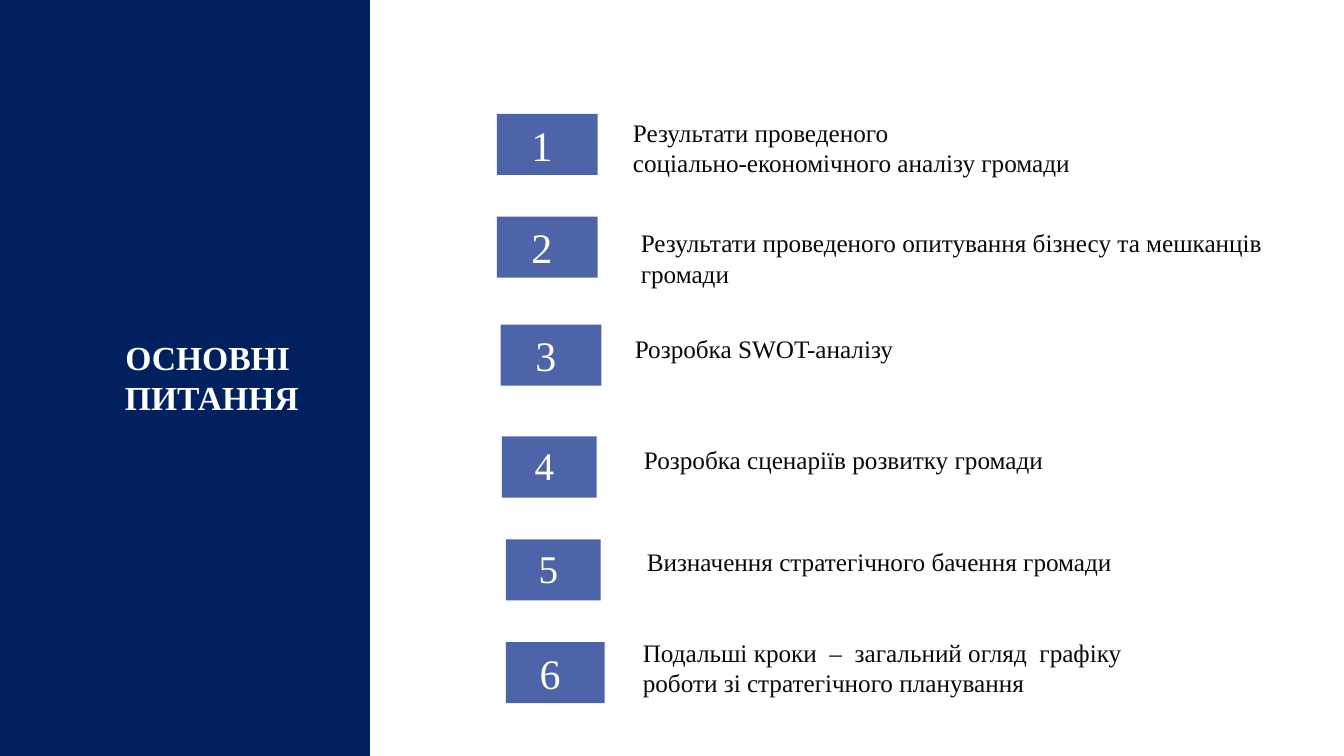
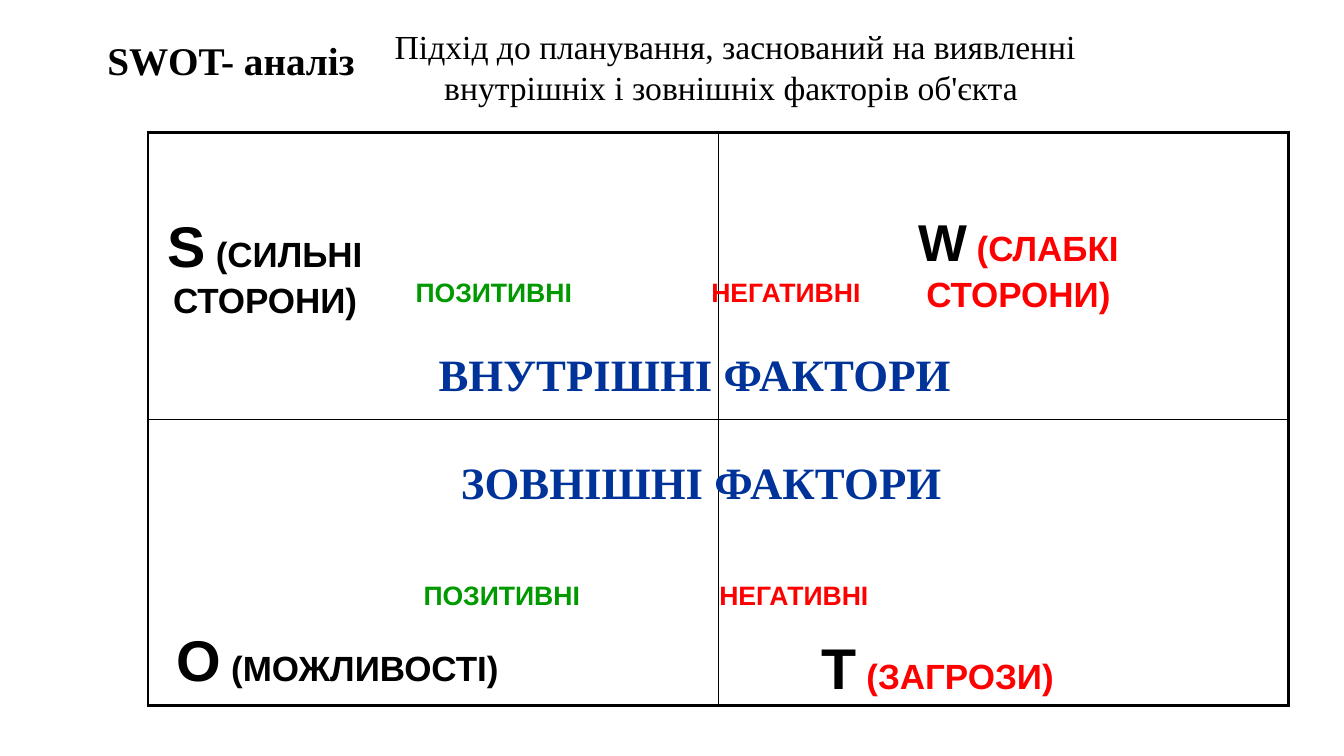
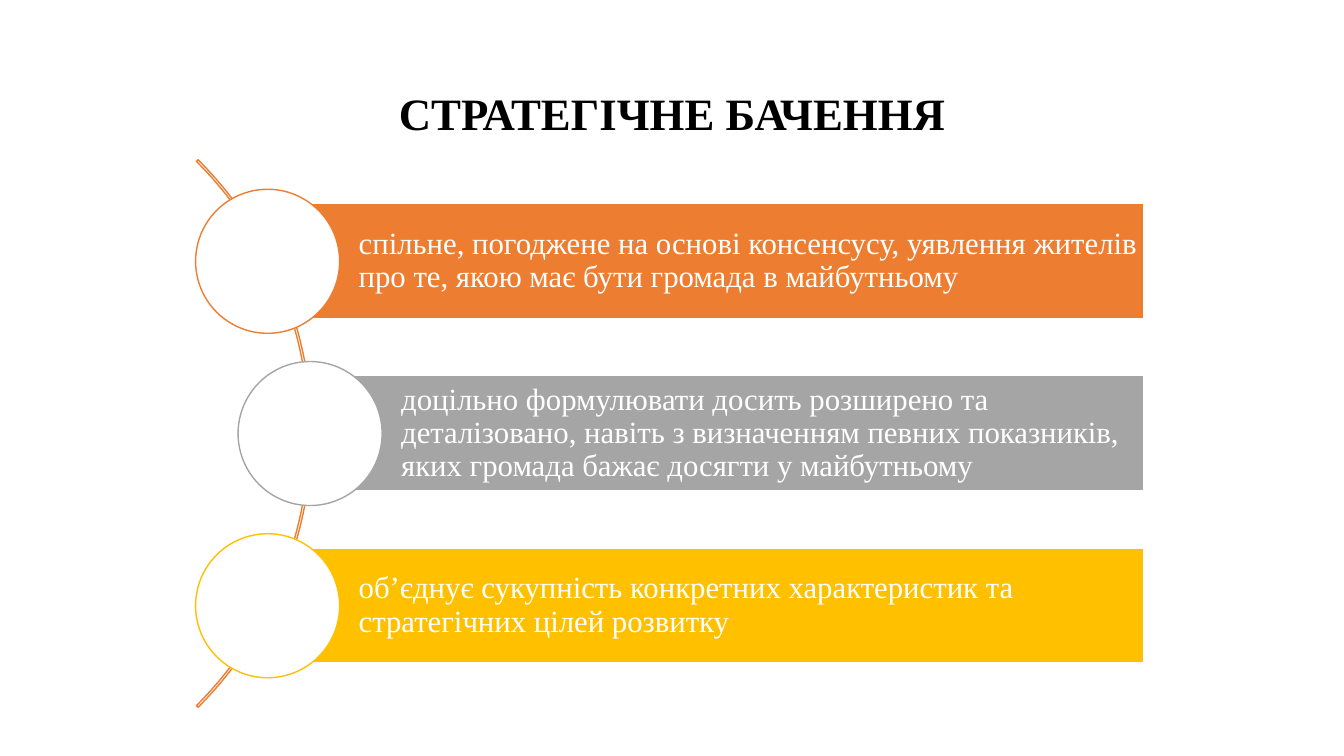
from lxml import etree
from pptx import Presentation
from pptx.dml.color import RGBColor
from pptx.enum import shapes, text
from pptx.oxml import ns
from pptx.util import Cm, Pt

# Shared style
SERIF, SANS = "Times New Roman", "Arial"
BLACK, WHITE, INK = "000000", "FFFFFF", "080808"
NAVY, BADGE_BLUE, FACTOR_BLUE = "002060", "4D64A9", "003399"
GREEN, RED = "009900", "FF0000"
ORANGE, GREY, GOLD = "ED7D31", "A5A5A5", "FFC000"
LEFT, CENTER = text.PP_ALIGN.LEFT, text.PP_ALIGN.CENTER
TOP, MIDDLE = text.MSO_ANCHOR.TOP, text.MSO_ANCHOR.MIDDLE
INSETS = (0.25, 0.13, 0.25, 0.13)


def color(value):
    return RGBColor.from_string(value)


def set_font(font, size, ink, name=SERIF, bold=False):
    font.name, font.size, font.bold = name, Pt(size), bold
    font.color.rgb = color(ink)


def set_frame(box, anchor=TOP, insets=INSETS):
    frame = box.text_frame
    frame.word_wrap = True
    frame.auto_size = text.MSO_AUTO_SIZE.NONE
    frame.vertical_anchor = anchor
    (frame.margin_left, frame.margin_top,
     frame.margin_right, frame.margin_bottom) = map(Cm, insets)
    return frame


def write(box, lines, size, ink, bold=False, name=SERIF, align=LEFT,
          anchor=TOP, insets=INSETS, spacing=1.0):
    """Fill a box with one paragraph per line, all in one font."""
    frame = set_frame(box, anchor, insets)
    for index, line in enumerate(lines):
        para = frame.add_paragraph() if index else frame.paragraphs[0]
        para.text = line
        para.alignment = align
        para.line_spacing = spacing
        set_font(para.font, size, ink, name, bold)


def add_text(page, place, lines, size, ink, **style):
    box = page.shapes.add_textbox(*map(Cm, place))
    write(box, lines, size, ink, **style)


def add_letter(page, place, letter, size, meaning, ink):
    """A large SWOT letter followed by its meaning."""
    box = page.shapes.add_textbox(*map(Cm, place))
    para = set_frame(box).paragraphs[0]
    para.alignment = CENTER
    for words, points, tone in ((letter, size, BLACK), (meaning, 25, ink)):
        span = para.add_run()
        span.text = words
        set_font(span.font, points, tone, SANS, True)


def add_shape(page, kind, place, fill=None, line=None):
    shape = page.shapes.add_shape(kind, *map(Cm, place))
    shape.shadow.inherit = False
    if fill:
        shape.fill.solid()
        shape.fill.fore_color.rgb = color(fill)
    else:
        shape.fill.background()
    if line:
        shape.line.color.rgb = color(line)
        shape.line.width = Pt(1)
    else:
        shape.line.fill.background()
    return shape


def set_title(page, place, lines, size, ink=BLACK, **style):
    title = page.shapes.title
    title.left, title.top, title.width, title.height = map(Cm, place)
    write(title, lines, size, ink, bold=True, align=CENTER, **style)
    return title


def set_borders(cell, widths):
    """Draw black left, right, top and bottom borders, in points."""
    properties = cell._tc.get_or_add_tcPr()
    for index, (side, width) in enumerate(zip("LRTB", widths)):
        edge = etree.Element(ns.qn(f"a:ln{side}"), w=str(Pt(width)))
        fill = etree.SubElement(edge, ns.qn("a:solidFill"))
        etree.SubElement(fill, ns.qn("a:srgbClr"), val=BLACK)
        properties.insert(index, edge)


def add_grid(page, place, heights):
    """An empty two-column table with a heavy outer frame."""
    table = page.shapes.add_table(len(heights), 2, *map(Cm, place)).table
    table.first_row = table.horz_banding = False
    heavy, thin = 2.25, 1
    last = len(heights) - 1
    for row, height in enumerate(heights):
        table.rows[row].height = Cm(height)
        for column in range(2):
            cell = table.cell(row, column)
            cell.fill.background()
            set_borders(cell, (thin if column else heavy,
                               heavy if column else thin,
                               thin if row else heavy,
                               heavy if row == last else thin))


def build_agenda(page):
    # Side panel, kept behind the title
    title = set_title(page, (-0.25, 8.38, 11.18, 1.73), ["ОСНОВНІ ", "ПИТАННЯ"],
                      24, WHITE, insets=(0.18, 0.1, 0.18, 0.1))
    panel = add_shape(page, shapes.MSO_SHAPE.RECTANGLE, (0, 0, 9.32, 19.05),
                      NAVY, NAVY)
    title.element.addprevious(panel.element)

    # Badge left, top, width and font size; text left and top; lines
    items = (
        (12.52, 2.87, 2.54, 30, 15.7, 2.82,
         ["Результати проведеного", "соціально-економічного аналізу громади"]),
        (12.52, 5.46, 2.54, 30, 15.9, 5.61,
         ["Результати проведеного опитування бізнесу та мешканців", "громади"]),
        (12.62, 8.18, 2.54, 30, 15.75, 8.28, ["Розробка SWOT-аналізу"]),
        (12.65, 11, 2.39, 28, 15.98, 11.07,
         ["Розробка сценаріїв розвитку громади"]),
        (12.75, 13.59, 2.39, 28, 16.05, 13.64,
         ["Визначення стратегічного бачення громади"]),
        (12.75, 16.18, 2.49, 30, 15.95, 15.93,
         ["Подальші кроки  –  загальний огляд  графіку",
          "роботи зі стратегічного планування"]),
    )
    for number, (left, top, width, size, text_left, text_top, lines) in enumerate(items, 1):
        badge = add_shape(page, shapes.MSO_SHAPE.RECTANGLE,
                          (left, top, width, 1.54), BADGE_BLUE)
        write(badge, [f"{number} "], size, WHITE, align=CENTER)
        add_text(page, (text_left, text_top, 17.5, 0.77 * len(lines) + 0.25),
                 lines, 18, INK)


def build_swot(page):
    set_title(page, (1.12, 0, 9.4, 3.18), ["SWOT- аналіз"], 28,
              anchor=MIDDLE, spacing=0.9)
    add_grid(page, (3.73, 3.33, 28.74, 14.45), (7.24, 7.21))

    # Factor headings
    for place, words in (((9.32, 8.61, 16.38, 1.63), "ВНУТРІШНІ ФАКТОРИ"),
                         ((8.53, 11.33, 18.29, 1.63), "ЗОВНІШНІ ФАКТОРИ")):
        add_text(page, place, [words], 32, FACTOR_BLUE, bold=True, align=CENTER)

    # Positive and negative sides of each row
    for shift, top in ((0, 6.83), (0.2, 14.45)):
        for left, words, ink in ((9.96, "ПОЗИТИВНІ", GREEN),
                                 (17.32, "НЕГАТИВНІ", RED)):
            add_text(page, (left + shift, top, 4.97, 1.09), [words], 19, ink,
                     bold=True, name=SANS, align=CENTER)

    # Quadrant names
    for place, letter, size, meaning, ink in (
            ((3.76, 5.16, 5.84, 3.18), "S", 41, " (СИЛЬНІ СТОРОНИ)", BLACK),
            ((3.76, 15.6, 9.5, 2.08), "O", 41, " (МОЖЛИВОСТІ)", BLACK),
            ((19.96, 15.8, 7.34, 2.08), "T", 41, " (ЗАГРОЗИ)", RED),
            ((22.53, 5.16, 6.27, 3), "W", 37, " (СЛАБКІ СТОРОНИ)", RED)):
        add_letter(page, place, letter, size, meaning, ink)

    add_text(page, (9.53, 0.53, 18, 2.31),
             ["Підхід до планування, заснований на виявленні "
              "внутрішніх і зовнішніх факторів об'єкта "],
             24, BLACK, align=CENTER)


def build_vision(page):
    set_title(page, (4.24, 1.73, 25.4, 2.36), ["СТРАТЕГІЧНЕ БАЧЕННЯ"], 32,
              anchor=MIDDLE, spacing=0.9)

    # Arc from 315 to 45 degrees
    arc = add_shape(page, shapes.MSO_SHAPE.BLOCK_ARC,
                    (-11.66, 1.17, 19.51, 19.51), line=ORANGE)
    for index, value in enumerate((189, 27, 0.003)):
        arc.adjustments[index] = value

    # Bars with circles, evenly spaced
    first_top, step, right = 5.13, 4.34, 28.83
    bars = (
        (6.73, ORANGE, "спільне, погоджене на основі консенсусу, уявлення "
                       "жителів про те, якою має бути громада в майбутньому"),
        (7.8, GREY, "доцільно формулювати досить розширено та деталізовано, "
                    "навіть з визначенням певних показників, яких громада "
                    "бажає досягти у майбутньому"),
        (6.73, GOLD, "об’єднує сукупність конкретних характеристик та "
                     "стратегічних цілей розвитку"),
    )
    for index, (left, fill, words) in enumerate(bars):
        top = first_top + index * step
        bar = add_shape(page, shapes.MSO_SHAPE.RECTANGLE,
                        (left, top, right - left, 2.9), fill, WHITE)
        write(bar, [words], 22, WHITE, anchor=MIDDLE, spacing=0.9,
              insets=(2.31, 0.15, 0.15, 0.15))
        add_shape(page, shapes.MSO_SHAPE.OVAL,
                  (left - 1.8, top - 0.36, 3.63, 3.63), WHITE, fill)


def main():
    deck = Presentation()
    deck.slide_width, deck.slide_height = Cm(33.87), Cm(19.05)
    title_only = deck.slide_layouts[5]
    for build in (build_agenda, build_swot, build_vision):
        build(deck.slides.add_slide(title_only))
    deck.save("out.pptx")


if __name__ == "__main__":
    main()
